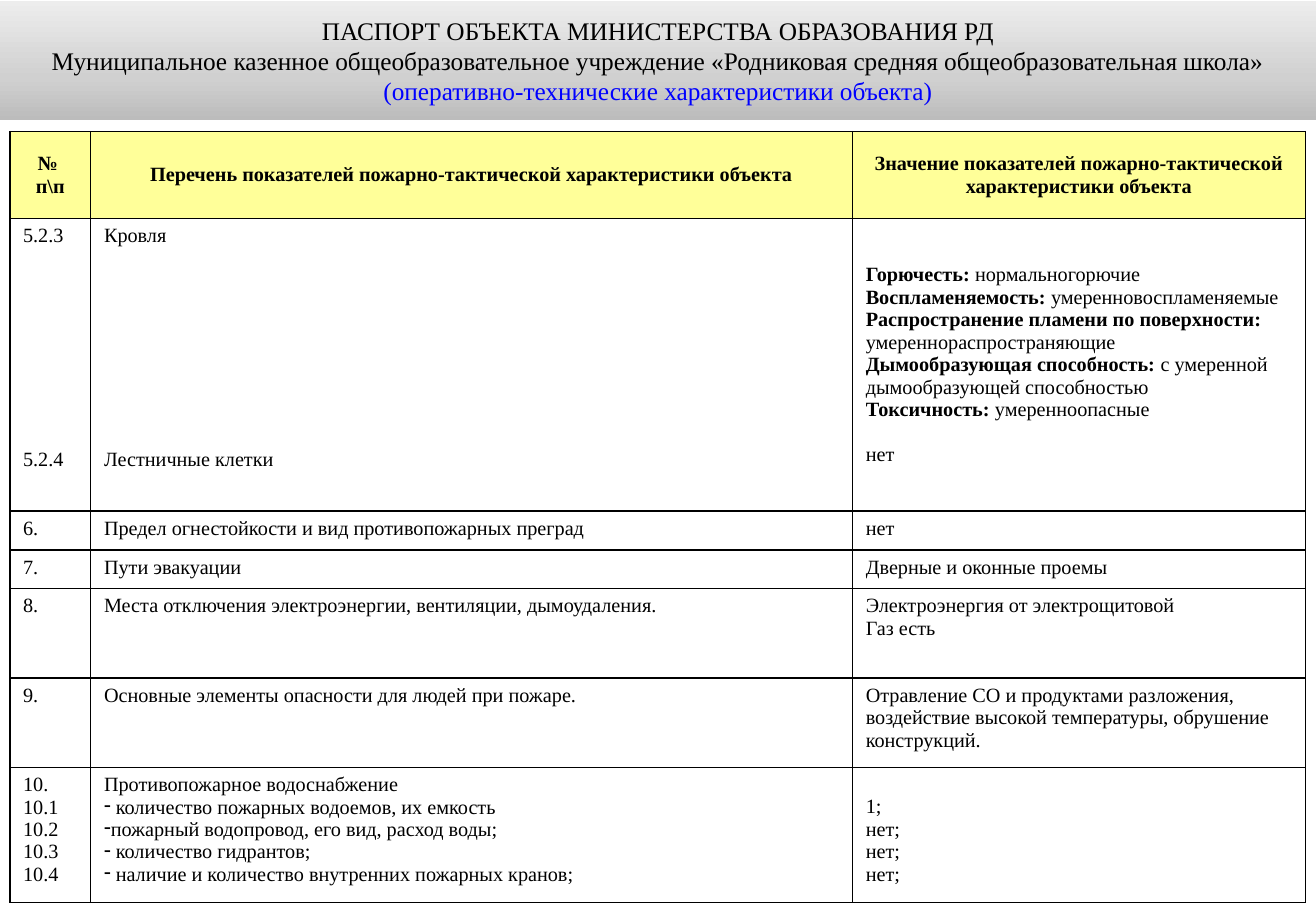
from copy import deepcopy

from lxml import etree
from pptx import Presentation
from pptx.dml.color import RGBColor
from pptx.enum import text
from pptx.oxml import ns
from pptx.util import Pt

BLACK = RGBColor(0x00, 0x00, 0x00)
WHITE = RGBColor(0xFF, 0xFF, 0xFF)
BLUE = RGBColor(0x00, 0x00, 0xFF)
YELLOW = RGBColor(0xFF, 0xFF, 0x99)
BANNER_STOPS = [
    (0, RGBColor(0xBC, 0xBC, 0xBC)),
    (0.35, RGBColor(0xD0, 0xD0, 0xD0)),
    (1, RGBColor(0xED, 0xED, 0xED)),
]
FONT = "Times New Roman"
LINE = 13.3

HEADING = [
    ("ПАСПОРТ ОБЪЕКТА МИНИСТЕРСТВА ОБРАЗОВАНИЯ РД", BLACK),
    ("Муниципальное казенное общеобразовательное учреждение "
     "«Родниковая средняя общеобразовательная школа»", BLACK),
    ("(оперативно-технические характеристики объекта)", BLUE),
]
COLUMNS = [48, 451.5, 268.5]
ROWS = [
    (51.5, [["№ ", "п\\п"],
            ["Перечень показателей пожарно-тактической характеристики объекта"],
            ["Значение показателей пожарно-тактической характеристики объекта"]]),
    (173.5, [["5.2.3", "5.2.4"],
             ["Кровля", "Лестничные клетки"],
             [("Горючесть: ", "нормальногорючие"),
              ("Воспламеняемость: ", "умеренновоспламеняемые"),
              ("Распространение пламени по поверхности:", ""),
              "умереннораспространяющие",
              ("Дымообразующая способность: ", "с умеренной дымообразующей способностью"),
              ("Токсичность: ", "умеренноопасные"),
              "нет"]]),
    (23, [["6."], ["Предел огнестойкости и вид противопожарных преград"], ["нет"]]),
    (23, [["7."], ["Пути эвакуации"], ["Дверные и оконные проемы"]]),
    (53, [["8."],
          ["Места отключения электроэнергии, вентиляции, дымоудаления."],
          ["Электроэнергия от электрощитовой", "Газ есть"]]),
    (53, [["9."],
          ["Основные элементы опасности для людей при пожаре."],
          ["Отравление СО и продуктами разложения, воздействие высокой температуры, "
           "обрушение конструкций."]]),
    (80, [["10.", "10.1", "10.2", "10.3", "10.4"],
          ["Противопожарное водоснабжение",
           "- количество пожарных водоемов, их емкость",
           "-пожарный водопровод, его вид, расход воды;",
           "- количество гидрантов;",
           "- наличие и количество внутренних пожарных кранов;"],
          ["1;", "нет;", "нет;", "нет;"]]),
]
LINES_ABOVE_LAST = {(1, 0): 9, (1, 1): 9, (1, 2): 1}
LINES_ABOVE_FIRST = {(6, 2): 1}
CENTRED = {(0, 0), (0, 1), (0, 2), (1, 2)}


def style(run, size, color, bold=False):
    """Format one run."""
    run.font.name, run.font.size, run.font.bold = FONT, Pt(size), bold
    run.font.color.rgb = color


def paragraphs(frame, count):
    """Return the given number of paragraphs of an empty frame."""
    return [frame.paragraphs[0]] + [frame.add_paragraph() for _ in range(count - 1)]


def fill_banner(banner):
    """Give the heading its grey gradient."""
    banner.fill.gradient()
    banner.fill.gradient_angle = 90
    stop_list = banner._element.spPr.find(".//" + ns.qn("a:gsLst"))
    stop_list.insert(1, deepcopy(stop_list[0]))
    for stop, (position, color) in zip(banner.fill.gradient_stops, BANNER_STOPS):
        stop.position, stop.color.rgb = position, color


def add_borders(cell):
    """Draw a black line on every side of a cell."""
    for side in ("lnL", "lnR", "lnT", "lnB"):
        border = etree.SubElement(cell._tc.get_or_add_tcPr(), ns.qn("a:" + side), w=str(Pt(1)))
        solid = etree.SubElement(border, ns.qn("a:solidFill"))
        etree.SubElement(solid, ns.qn("a:srgbClr"), val=str(BLACK))


def add_dash(paragraph):
    """Give a paragraph a dash as its bullet."""
    properties = paragraph._p.get_or_add_pPr()
    properties.set("marL", "0")
    properties.set("indent", "0")
    etree.SubElement(properties, ns.qn("a:buChar"), char="-")


def write_entry(paragraph, entry, header):
    """Write a plain entry or a bold label with its value."""
    if isinstance(entry, tuple):
        for part, bold in zip(entry, (True, False)):
            if part:
                run = paragraph.add_run()
                run.text = part
                style(run, 12, BLACK, bold)
        return
    if entry.startswith("-"):
        add_dash(paragraph)
    paragraph.text = entry.removeprefix("-")
    style(paragraph.runs[0], 12, BLACK, header)


def write_cell(cell, entries, place):
    """Fill and format one table cell."""
    header = place[0] == 0
    add_borders(cell)
    cell.fill.solid()
    cell.fill.fore_color.rgb = YELLOW if header else WHITE
    cell.margin_left = cell.margin_right = Pt(7.9)
    cell.margin_top = Pt(3.6 + LINE * LINES_ABOVE_FIRST.get(place, 0))
    cell.margin_bottom = Pt(3.6)
    cell.vertical_anchor = text.MSO_ANCHOR.MIDDLE if place in CENTRED else text.MSO_ANCHOR.TOP
    lines = paragraphs(cell.text_frame, len(entries))
    for line, entry in zip(lines, entries):
        line.alignment = text.PP_ALIGN.CENTER if header else text.PP_ALIGN.LEFT
        write_entry(line, entry, header)
    if place in LINES_ABOVE_LAST:
        lines[-1].space_before = Pt(LINE * LINES_ABOVE_LAST[place])


def main():
    """Build the slide with its heading and table."""
    deck = Presentation()
    deck.slide_width, deck.slide_height = Pt(780), Pt(540)
    slide = deck.slides.add_slide(deck.slide_layouts[5])

    banner = slide.shapes.title
    banner.left, banner.top, banner.width, banner.height = Pt(0), Pt(0.5), Pt(780), Pt(70.5)
    fill_banner(banner)
    frame = banner.text_frame
    frame.word_wrap = True
    frame.auto_size = text.MSO_AUTO_SIZE.NONE
    frame.vertical_anchor = text.MSO_ANCHOR.MIDDLE
    frame.margin_left = frame.margin_right = Pt(6.5)
    for line, (words, color) in zip(paragraphs(frame, len(HEADING)), HEADING):
        line.text = words
        line.alignment = text.PP_ALIGN.CENTER
        style(line.runs[0], 15, color)

    passport = slide.shapes.add_table(
        len(ROWS), len(COLUMNS), Pt(5.8), Pt(78),
        Pt(sum(COLUMNS)), Pt(sum(height for height, _ in ROWS))).table
    passport.first_row = passport.horz_banding = False
    for column, width in zip(passport.columns, COLUMNS):
        column.width = Pt(width)
    for r, (height, cells) in enumerate(ROWS):
        passport.rows[r].height = Pt(height)
        for c, entries in enumerate(cells):
            write_cell(passport.cell(r, c), entries, (r, c))

    deck.save("out.pptx")


if __name__ == "__main__":
    main()
